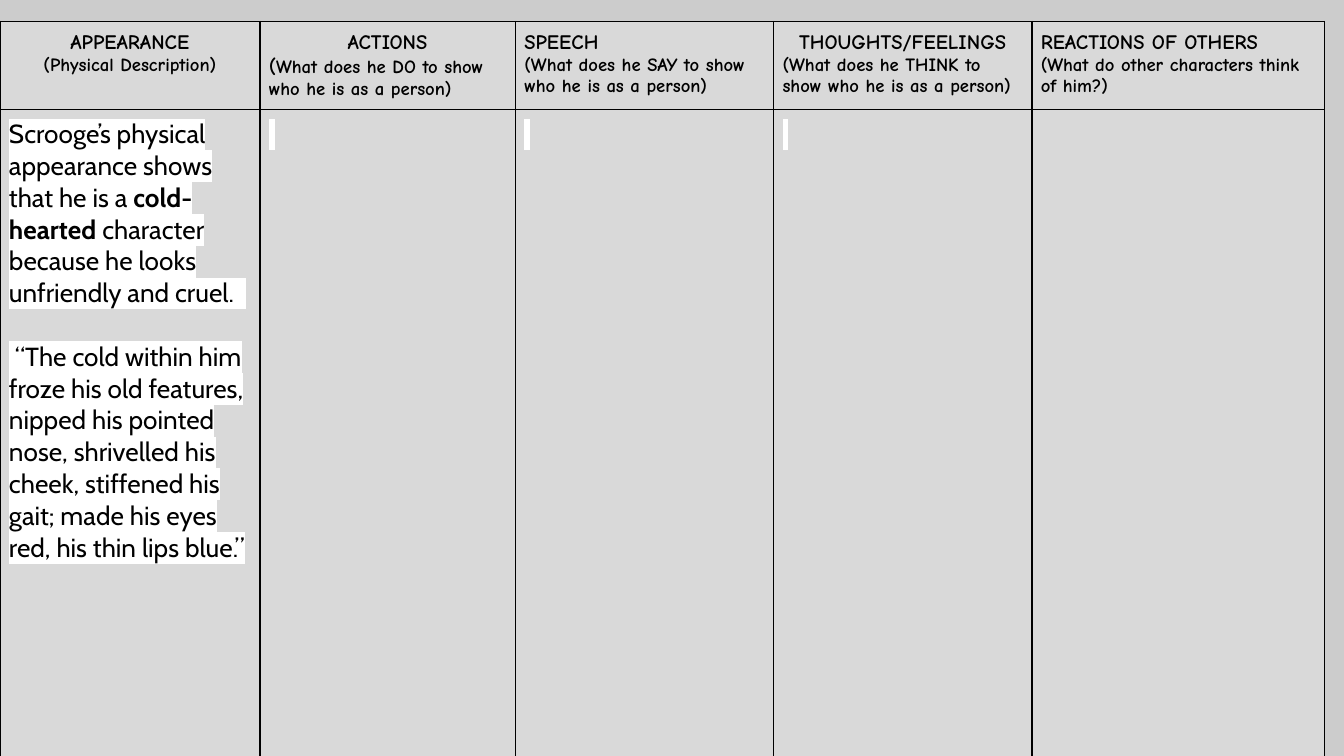
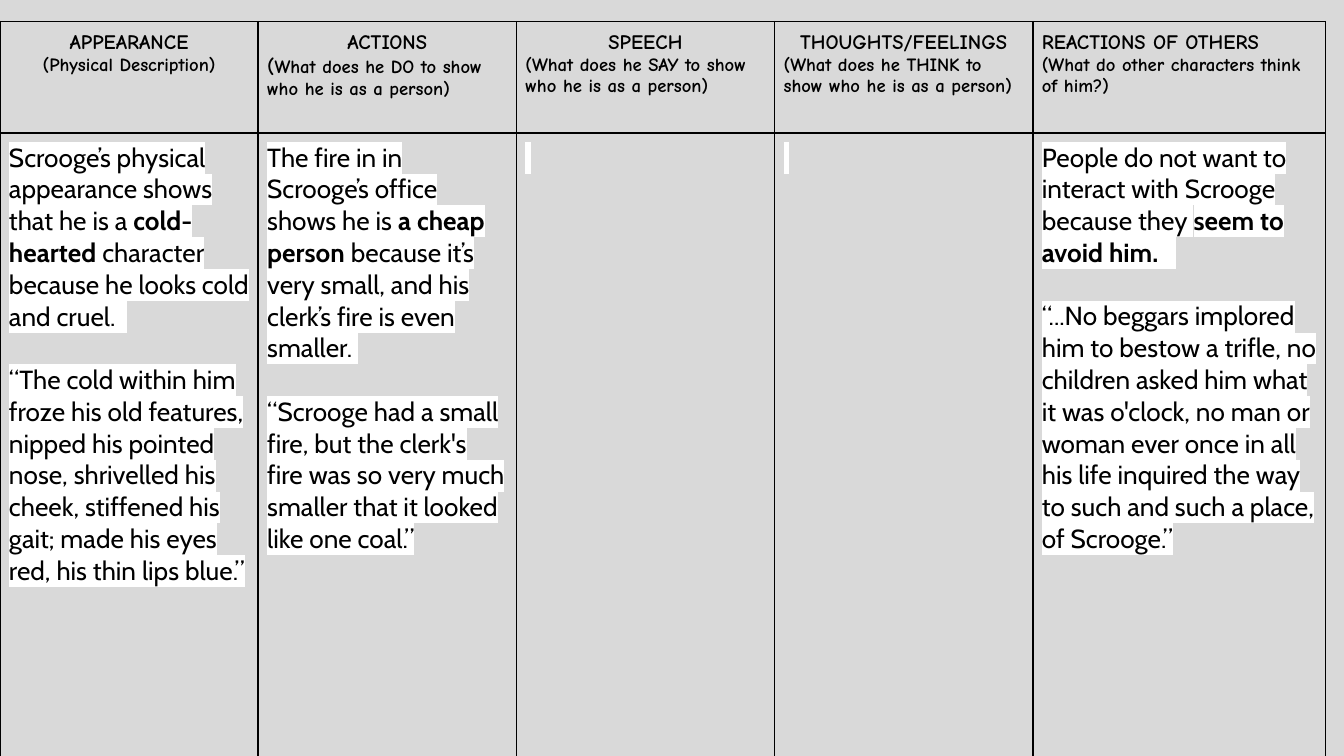
import pptx
import pptx.dml.color
import pptx.enum.text
import pptx.oxml
import pptx.util
from pptx.oxml.ns import nsdecls

Cm, Pt = pptx.util.Cm, pptx.util.Pt
RGB = pptx.dml.color.RGBColor
ALIGN = {"l": pptx.enum.text.PP_ALIGN.LEFT, "c": pptx.enum.text.PP_ALIGN.CENTER}

COLORS = {"text": "000000", "line": "000000", "cell": "D9D9D9", "mark": "FFFFFF"}
TITLE = {"name": "Comic Neue", "size": Pt(11), "bold": True}
HINT = {**TITLE, "size": Pt(10)}
BODY = {"name": "Cabin", "size": Pt(14), "bold": False}

TABLE_TOP, BODY_HEIGHT, MARGIN = 0.41, 14.43, 0.17
QUOTE_GAP = Pt(17)

# title, hint opening at title size, hint, hint alignment
HEADERS = [
    ("APPEARANCE", "", "(Physical Description)", "c"),
    ("ACTIONS", "(", "What does he DO to show who he is as a person)", "l"),
    ("SPEECH", "", "(What does he SAY to show who he is as a person)", "l"),
    ("THOUGHTS/FEELINGS", "", "(What does he THINK to show who he is as a person)", "l"),
    ("REACTIONS OF OTHERS", "", "(What do other characters think of him?)", "l"),
]

LOOKS = "Scrooge’s physical appearance shows that he is a **cold-hearted **character because he looks "
LOOKS_QUOTE = ("“The cold within him froze his old features, nipped his pointed nose, "
               "shrivelled his cheek, stiffened his gait; made his eyes red, his thin lips blue.”")
ACTIONS = ("The fire in in Scrooge’s office shows he is** a cheap person **because it’s very small, "
           "and his clerk’s fire is even smaller. ")
ACTIONS_QUOTE = ("“Scrooge had a small fire, but the clerk's fire was so very much smaller "
                 "that it looked like one coal.”")
REACTIONS = "People do not want to interact with Scrooge because they **seem to avoid him.**   "
REACTIONS_QUOTE = ("“...No beggars implored him to bestow a trifle, no children asked him what it was "
                   "o'clock, no man or woman ever once in all his life inquired the way to such and "
                   "such a place, of Scrooge.”")
BLANK = [" "]  # a highlighted space waiting for an answer

SLIDES = [
    {
        "background": "CCCCCC",
        "columns": [4.91, 4.83, 4.88, 4.88, 5.53],
        "header_height": 1.66,
        "title_align": "cclcl",
        "body": [[LOOKS + "unfriendly and cruel.  ", " " + LOOKS_QUOTE], BLANK, BLANK, BLANK, []],
    },
    {
        "background": "D9D9D9",
        "columns": [4.88, 4.88, 4.88, 4.88, 5.53],
        "header_height": 2.1,
        "title_align": "ccccl",
        "body": [[LOOKS + "cold and cruel.  ", LOOKS_QUOTE], [ACTIONS, ACTIONS_QUOTE],
                 BLANK, BLANK, [REACTIONS, REACTIONS_QUOTE]],
    },
]


def add_run(p, text, style, marked=False):
    r = p.add_run()
    r.text = text
    for key, value in style.items():
        setattr(r.font, key, value)
    r.font.color.rgb = RGB.from_string(COLORS["text"])
    if marked:
        fill = r.font._element.find(pptx.oxml.ns.qn("a:solidFill"))
        fill.addnext(pptx.oxml.parse_xml(
            f'<a:highlight {nsdecls("a")}><a:srgbClr val="{COLORS["mark"]}"/></a:highlight>'))


def style_cell(cell):
    for side in ("left", "right", "top", "bottom"):
        setattr(cell, f"margin_{side}", Cm(MARGIN))
    cell.fill.solid()
    cell.fill.fore_color.rgb = RGB.from_string(COLORS["cell"])
    tc_pr = cell._tc.get_or_add_tcPr()
    for i, side in enumerate("LRTB"):
        tc_pr.insert(i, pptx.oxml.parse_xml(
            f'<a:ln{side} {nsdecls("a")} w="{Pt(1)}"><a:solidFill>'
            f'<a:srgbClr val="{COLORS["line"]}"/></a:solidFill></a:ln{side}>'))


def write_header(cell, header, title_align):
    title, opening, hint, hint_align = header
    p = cell.text_frame.paragraphs[0]
    p.alignment = ALIGN[title_align]
    add_run(p, title, TITLE)
    p = cell.text_frame.add_paragraph()
    p.alignment = ALIGN[hint_align]
    if opening:
        add_run(p, opening, TITLE)
    add_run(p, hint, HINT)


def write_body(cell, paragraphs):
    """Write highlighted paragraphs; text between ** pairs is bold."""
    tf = cell.text_frame
    for i, text in enumerate(paragraphs):
        p = tf.add_paragraph() if i else tf.paragraphs[0]
        if i:
            p.space_before = QUOTE_GAP
        for j, part in enumerate(text.split("**")):
            add_run(p, part, {**BODY, "bold": j % 2 == 1}, marked=True)


def add_character_chart(prs, content):
    s = prs.slides.add_slide(prs.slide_layouts[6])
    s.background.fill.solid()
    s.background.fill.fore_color.rgb = RGB.from_string(content["background"])
    widths = content["columns"]
    heights = [content["header_height"], BODY_HEIGHT]
    table = s.shapes.add_table(2, len(widths), 0, Cm(TABLE_TOP),
                               Cm(sum(widths)), Cm(sum(heights))).table
    table.first_row = table.horz_banding = False
    for row, height in zip(table.rows, heights):
        row.height = Cm(height)
    for i, width in enumerate(widths):
        table.columns[i].width = Cm(width)
        for row in range(2):
            style_cell(table.cell(row, i))
        write_header(table.cell(0, i), HEADERS[i], content["title_align"][i])
        write_body(table.cell(1, i), content["body"][i])


def main():
    prs = pptx.Presentation()
    prs.slide_width, prs.slide_height = Cm(25.4), Cm(14.29)
    for content in SLIDES:
        add_character_chart(prs, content)
    prs.save("out.pptx")


if __name__ == "__main__":
    main()
